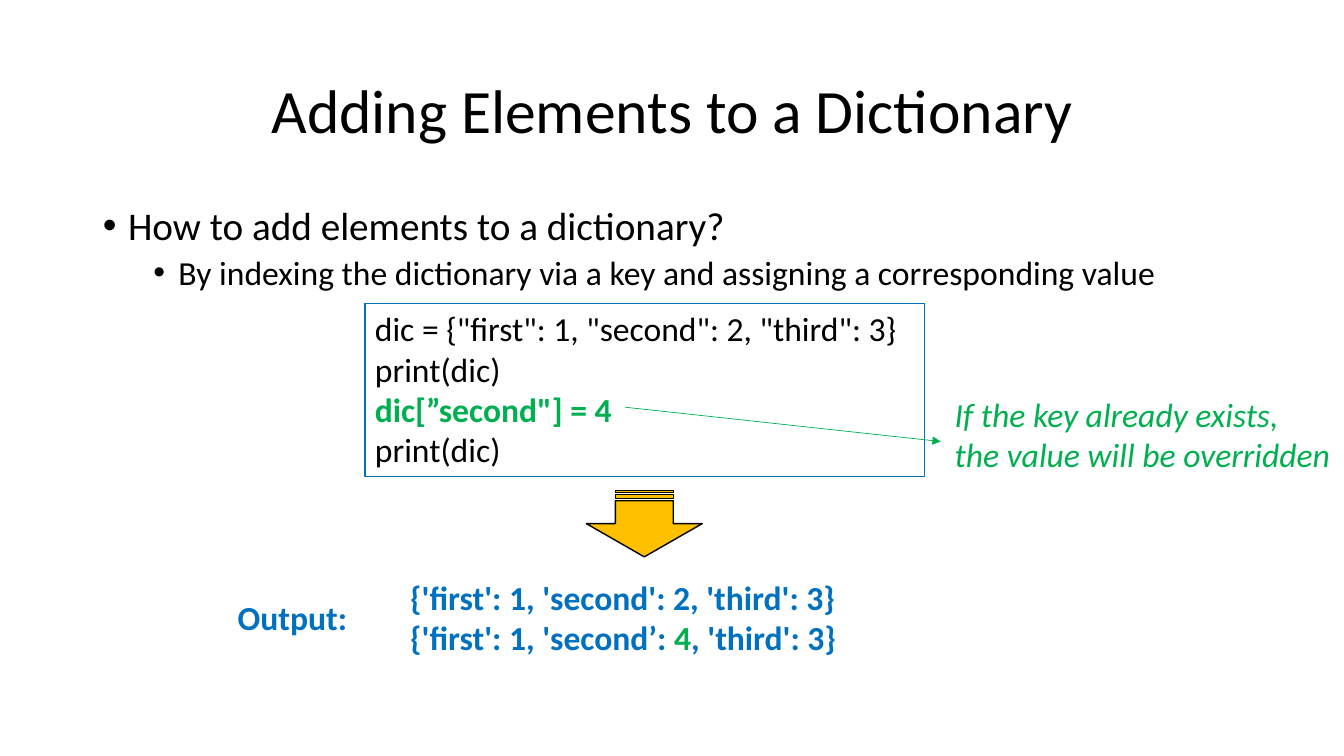
from lxml import etree
from pptx import Presentation
from pptx.dml.color import RGBColor
from pptx.enum.shapes import MSO_CONNECTOR, MSO_SHAPE
from pptx.enum.text import MSO_ANCHOR, MSO_AUTO_SIZE, PP_ALIGN
from pptx.oxml.ns import qn
from pptx.util import Inches, Pt

BLACK = RGBColor(0x00, 0x00, 0x00)
BLUE = RGBColor(0x00, 0x70, 0xC0)
GREEN = RGBColor(0x00, 0xB0, 0x50)
GOLD = RGBColor(0xFF, 0xC0, 0x00)

RECT = MSO_SHAPE.RECTANGLE
STRIPED = MSO_SHAPE.STRIPED_RIGHT_ARROW
STRAIGHT = MSO_CONNECTOR.STRAIGHT
LEFT, CENTER = PP_ALIGN.LEFT, PP_ALIGN.CENTER
TOP, MIDDLE = MSO_ANCHOR.TOP, MSO_ANCHOR.MIDDLE
FIXED = MSO_AUTO_SIZE.NONE


class Page:
    font = "Calibri"
    size = 24

    def __init__(self, deck):
        self.slide = deck.slides.add_slide(deck.slide_layouts[1])
        self.shapes = self.slide.shapes

    def style(self, run, color=BLACK, size=None, bold=False, italic=False):
        font = run.font
        font.name, font.size = self.font, Pt(size or self.size)
        font.color.rgb = color
        font.bold, font.italic = bold, italic

    def fill(self, frame, lines, **look):
        """Fill a frame; each line is a list of (text, changes to look)."""
        for i, line in enumerate(lines):
            para = frame.paragraphs[0] if i == 0 else frame.add_paragraph()
            para.alignment = LEFT
            for text, change in line:
                run = para.add_run()
                run.text = text
                self.style(run, **{**look, **change})

    def place(self, shape, box):
        shape.left, shape.top, shape.width, shape.height = map(Inches, box)
        shape.text_frame.auto_size = FIXED

    def title(self, text, box):
        shape = self.shapes.title
        self.place(shape, box)
        frame = shape.text_frame
        frame.text = text
        frame.vertical_anchor = MIDDLE
        para = frame.paragraphs[0]
        para.alignment, para.line_spacing = CENTER, 0.9
        self.style(para.runs[0], size=44)

    def bullets(self, items, box):
        """Fill the body; each item is (text, level, size, space before)."""
        shape = self.slide.placeholders[1]
        self.place(shape, box)
        frame = shape.text_frame
        frame.text = "\n".join(item[0] for item in items)
        for para, (_, level, size, gap) in zip(frame.paragraphs, items):
            para.level, para.line_spacing = level, 0.9
            para.space_before = Pt(gap)
            self.style(para.runs[0], size=size)
            props = para._p.get_or_add_pPr()
            props.set("marL", str(Inches(0.25 + 0.5 * level)))
            props.set("indent", str(Inches(-0.25)))
            etree.SubElement(props, qn("a:buFont"), typeface="Arial")
            etree.SubElement(props, qn("a:buChar"), char="•")

    def label(self, lines, box, **look):
        frame = self.shapes.add_textbox(*map(Inches, box)).text_frame
        frame.word_wrap = False
        self.fill(frame, lines, **look)

    def shape(self, kind, box, line, width, fill=None):
        shape = self.shapes.add_shape(kind, *map(Inches, box))
        shape.shadow.inherit = False
        if fill is None:
            shape.fill.background()
        else:
            shape.fill.solid()
            shape.fill.fore_color.rgb = fill
        shape.line.color.rgb, shape.line.width = line, Pt(width)
        return shape

    def code(self, lines, box):
        frame = self.shape(RECT, box, BLUE, 0.75).text_frame
        frame.vertical_anchor = TOP
        self.fill(frame, lines)

    def arrow(self, start, end, color, width):
        link = self.shapes.add_connector(STRAIGHT, *map(Inches, start + end))
        link.line.color.rgb, link.line.width = color, Pt(width)
        props = link._element.spPr
        etree.SubElement(props.find(qn("a:ln")), qn("a:tailEnd"), type="triangle")
        etree.SubElement(props, qn("a:effectLst"))


def main():
    deck = Presentation()
    deck.slide_width, deck.slide_height = Inches(13.33), Inches(7.5)
    page = Page(deck)
    page.title("Adding Elements to a Dictionary", (0.92, 0.4, 11.5, 1.45))
    page.bullets([
        ("How to add elements to a dictionary?", 0, 28, 10),
        ("By indexing the dictionary via a key and assigning a corresponding value", 1, 24, 5),
    ], (0.92, 2, 11.5, 4.76))
    page.label([[("Output:", {})]], (2.26, 5.87, 1.3, 0.5), color=BLUE, bold=True)
    page.code([
        [('dic = {"first": 1, "second": 2, "third": 3}', {})],
        [("print(dic)", {})],
        [('dic[”second"] = 4', {"color": GREEN, "bold": True})],
        [("print(dic)", {})],
    ], (3.62, 3.01, 5.55, 1.72))
    down = page.shape(STRIPED, (6.06, 4.62, 0.66, 1.15), BLACK, 1, GOLD)
    down.rotation = 90
    page.label([
        [("{'first': 1, 'second': 2, 'third': 3}", {})],
        [("{'first': 1, 'second’: ", {}), ("4", {"color": GREEN}), (", 'third': 3}", {})],
    ], (3.97, 5.67, 4.46, 0.91), color=BLUE, bold=True)
    page.label([
        [("If the key already exists, ", {})],
        [("the value will be overridden", {})],
    ], (9.37, 3.86, 3.97, 0.91), color=GREEN, italic=True)
    page.arrow((6.2, 4.04), (9.33, 4.38), GREEN, 0.5)
    deck.save("out.pptx")


if __name__ == "__main__":
    main()
